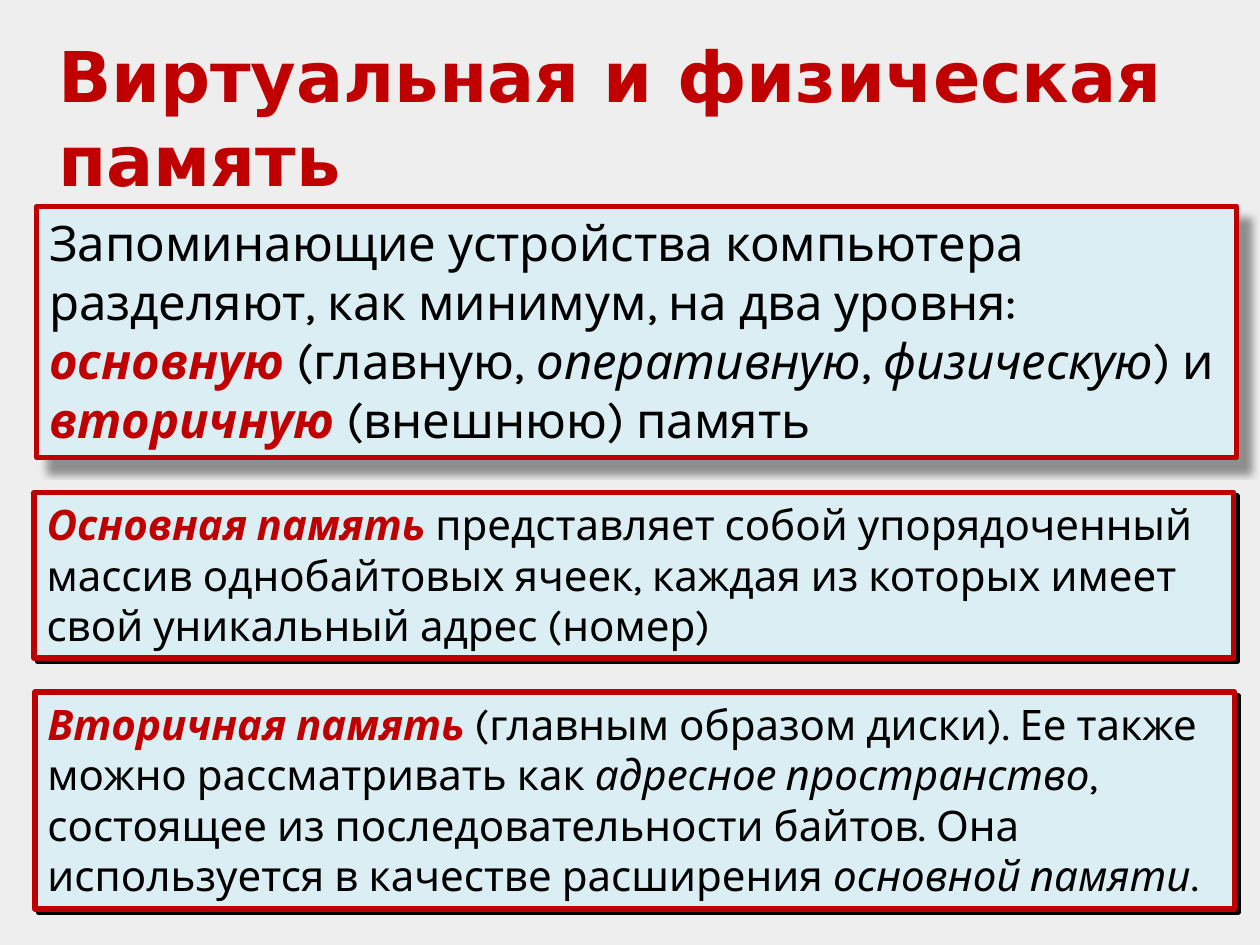
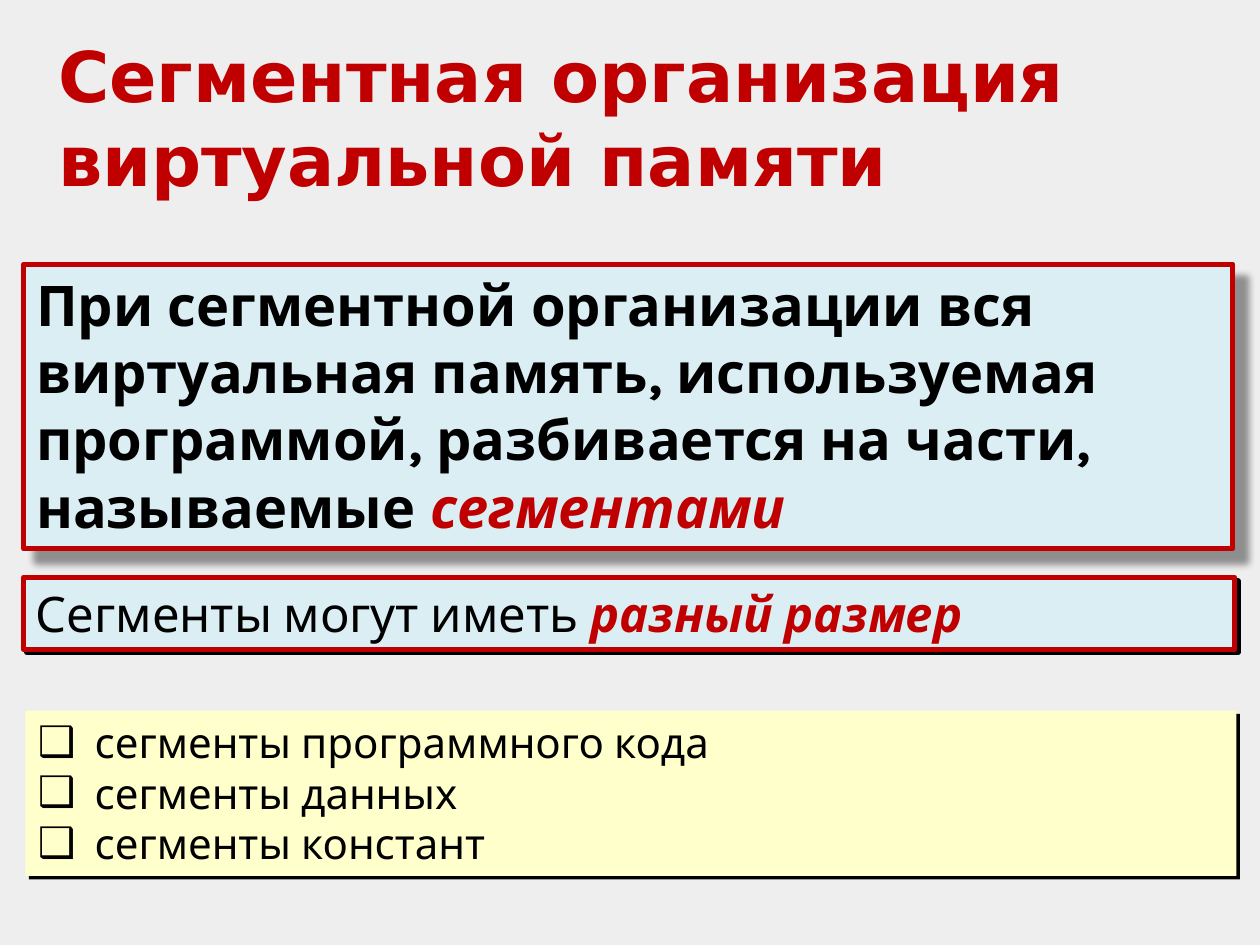
from lxml import etree
from pptx import Presentation
from pptx.dml.color import RGBColor
from pptx.enum.shapes import MSO_SHAPE
from pptx.enum.text import MSO_ANCHOR, MSO_AUTO_SIZE, PP_ALIGN
from pptx.oxml.ns import qn
from pptx.util import Pt

RED, BLACK = "C00000", "000000"
BACKGROUND, CARD_FILL, LIST_FILL = "EEEEEE", "DBEEF4", "FFFFCC"
TITLE_FONT, TEXT_FONT = "DejaVu Sans", "Karla"
TITLE_BOX = (26, 15, 668, 104.5)
LIST_INDENT = 32.4
SOFT_SHADOW = {"alpha": 40, "blur": 4, "distance": 10}
HARD_SHADOW = {"alpha": 100, "blur": 0, "distance": 2.8}

PLAIN, BOLD, ITALIC = {}, {"bold": True}, {"italic": True}
TERM = {"bold": True, "italic": True, "color": RED}


def rgb(color):
    """Turn a hex string into a colour."""
    return RGBColor.from_string(color)


def format_run(span, size, font=TEXT_FONT, color=BLACK, bold=False, italic=False):
    """Set the font of one run."""
    span.font.name = font
    span.font.size = Pt(size)
    span.font.color.rgb = rgb(color)
    span.font.bold = bold
    span.font.italic = italic


def place(shape, box):
    """Move a shape to a box given in points."""
    shape.left, shape.top, shape.width, shape.height = map(Pt, box)


def prepare_frame(shape):
    """Make the text wrap from the top left corner of a shape."""
    frame = shape.text_frame
    frame.word_wrap = True
    frame.auto_size = MSO_AUTO_SIZE.NONE
    frame.vertical_anchor = MSO_ANCHOR.TOP
    return frame


def add_shadow(shape, alpha, blur, distance):
    """Cast a black shadow to the lower right."""
    shape.shadow.inherit = False
    effects = shape._element.spPr.find(qn("a:effectLst"))
    outer = etree.SubElement(
        effects, qn("a:outerShdw"), blurRad=str(Pt(blur)), dist=str(Pt(distance)),
        dir=str(45 * 60000), algn="tl", rotWithShape="0")
    color = etree.SubElement(outer, qn("a:srgbClr"), val=BLACK)
    etree.SubElement(color, qn("a:alpha"), val=str(alpha * 1000))


def add_page(deck, layout_index, title):
    """Add a slide with the shared background and title style."""
    page = deck.slides.add_slide(deck.slide_layouts[layout_index])
    page.background.fill.solid()
    page.background.fill.fore_color.rgb = rgb(BACKGROUND)
    place(page.shapes.title, TITLE_BOX)
    frame = prepare_frame(page.shapes.title)
    frame.text = title
    para = frame.paragraphs[0]
    para.alignment = PP_ALIGN.LEFT
    format_run(para.runs[0], 40, TITLE_FONT, RED, bold=True)
    return page


def add_card(page, box, size, spans, shadow=HARD_SHADOW):
    """Add a framed statement with mixed text styles."""
    card = page.shapes.add_shape(MSO_SHAPE.RECTANGLE, *map(Pt, box))
    card.fill.solid()
    card.fill.fore_color.rgb = rgb(CARD_FILL)
    card.line.color.rgb = rgb(RED)
    card.line.width = Pt(3)
    add_shadow(card, **shadow)
    para = prepare_frame(card).paragraphs[0]
    para.alignment = PP_ALIGN.LEFT
    for text, style in spans:
        span = para.add_run()
        span.text = text
        format_run(span, size, **style)


def fill_list(page, box, items):
    """Fill the body placeholder with a list on a coloured panel."""
    panel = page.placeholders[1]
    place(panel, box)
    panel.fill.solid()
    panel.fill.fore_color.rgb = rgb(LIST_FILL)
    add_shadow(panel, **HARD_SHADOW)
    frame = prepare_frame(panel)
    frame.text = "\n".join(items)
    for para in frame.paragraphs:
        para.space_before = Pt(0)
        properties = para._p.get_or_add_pPr()
        properties.set("marL", str(Pt(LIST_INDENT)))
        properties.set("indent", str(-Pt(LIST_INDENT)))
        etree.SubElement(properties, qn("a:buChar"), char="❑")
        format_run(para.runs[0], 24)


def build_memory_levels(deck):
    """Build the slide on main and secondary memory."""
    page = add_page(deck, 5, "Виртуальная и физическая память")
    add_card(page, (21, 118, 685.5, 143.5), 28, [
        ("Запоминающие устройства компьютера разделяют, как минимум, на два уровня: ", PLAIN),
        ("основную", TERM),
        (" (главную, ", PLAIN),
        ("оперативную", ITALIC),
        (", ", PLAIN),
        ("физическую", ITALIC),
        (") и ", PLAIN),
        ("вторичную", TERM),
        (" (внешнюю) память", PLAIN),
    ], SOFT_SHADOW)
    add_card(page, (19.5, 281.5, 685.5, 94.5), 24, [
        ("Основная память ", TERM),
        ("представляет собой упорядоченный массив однобайтовых ячеек, "
         "каждая из которых имеет свой уникальный адрес (номер)", PLAIN),
    ])
    add_card(page, (20, 395.5, 685.5, 124), 24, [
        ("Вторичная память ", TERM),
        ("(главным образом диски). Ее также можно рассматривать как ", PLAIN),
        ("адресное пространство", ITALIC),
        (", состоящее из последовательности байтов. "
         "Она используется в качестве расширения ", PLAIN),
        ("основной памяти", ITALIC),
        (".", PLAIN),
    ])


def build_segments(deck):
    """Build the slide on segmented virtual memory."""
    page = add_page(deck, 1, "Сегментная организация виртуальной памяти")
    add_card(page, (13.5, 151, 691, 162.5), 32, [
        ("При сегментной организации вся виртуальная память, используемая "
         "программой, разбивается на части, называемые ", BOLD),
        ("сегментами", TERM),
    ], SOFT_SHADOW)
    add_card(page, (13.5, 330, 692, 41), 28, [
        ("Сегменты могут иметь ", PLAIN),
        ("разный размер", TERM),
    ])
    fill_list(page, (14.5, 406, 692, 94.5), [
        "сегменты программного кода",
        "сегменты данных",
        "сегменты констант",
    ])


def main():
    """Build and save the deck."""
    deck = Presentation()
    deck.slide_width, deck.slide_height = Pt(720), Pt(540)
    build_memory_levels(deck)
    build_segments(deck)
    deck.save("out.pptx")


if __name__ == "__main__":
    main()
